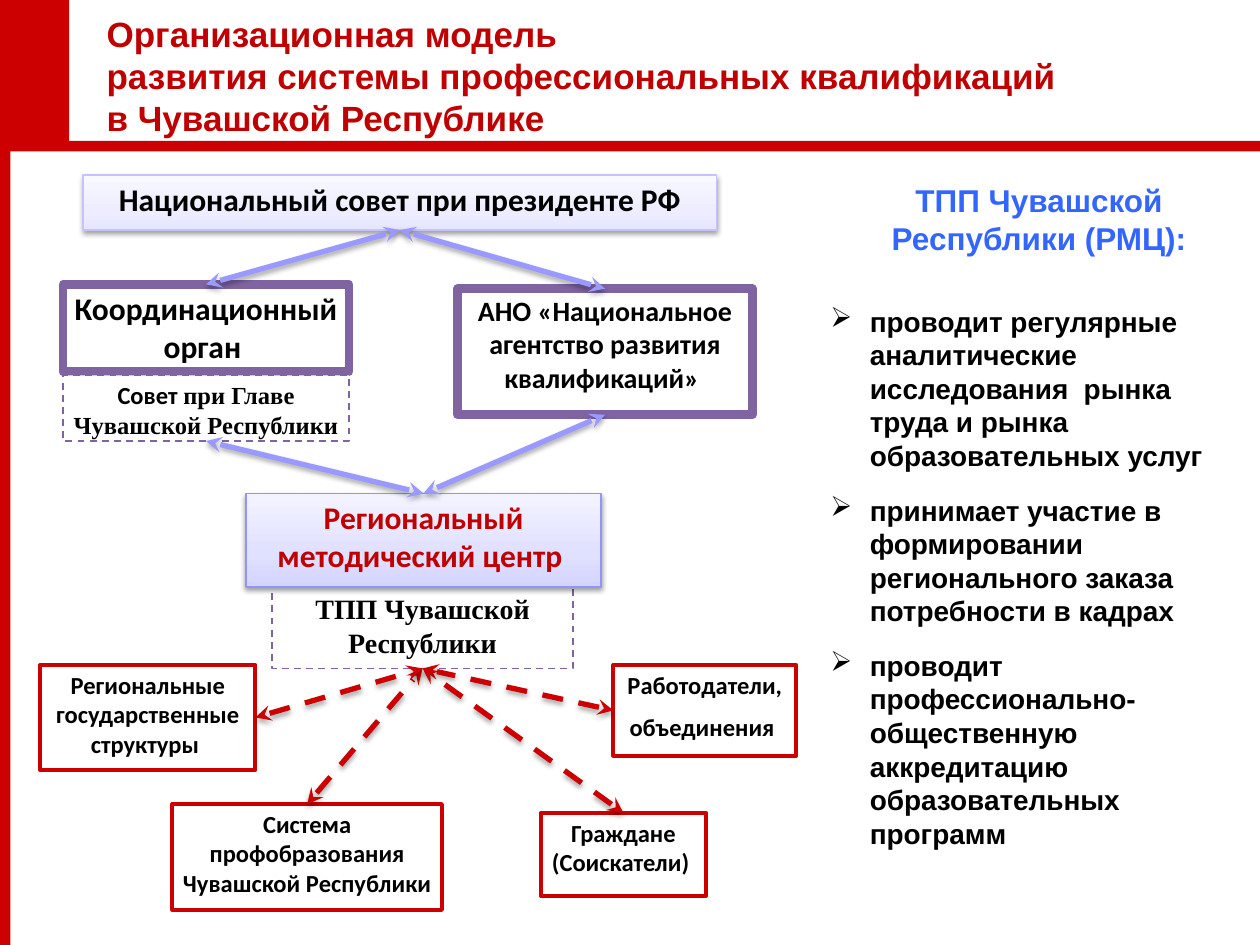
from copy import deepcopy

from lxml import etree
from pptx import Presentation
from pptx.dml.color import RGBColor
from pptx.enum.dml import MSO_LINE
from pptx.enum.shapes import MSO_CONNECTOR, MSO_SHAPE
from pptx.enum.text import MSO_ANCHOR, PP_ALIGN
from pptx.oxml.ns import qn
from pptx.util import Pt

RECTANGLE = MSO_SHAPE.RECTANGLE
STRAIGHT = MSO_CONNECTOR.STRAIGHT
DASH = MSO_LINE.DASH
CENTER = PP_ALIGN.CENTER
TOP, LEFT, BOTTOM, RIGHT = range(4)  # connection sites of a rectangle

rgb = RGBColor.from_string
RED, DARK_RED, PURPLE, LILAC = "CC0000", "C00000", "8064A2", "9999FF"
BLACK, WHITE, BLUE = "000000", "FFFFFF", "3366FF"


def add_shadow(effects, distance, opacity):
    """Put a soft shadow that falls straight down into an effect list."""
    shadow = etree.SubElement(
        effects, qn("a:outerShdw"), blurRad=str(Pt(3.1)), dist=str(Pt(distance)),
        dir="5400000", rotWithShape="0")
    color = etree.SubElement(shadow, qn("a:srgbClr"), val=BLACK)
    etree.SubElement(color, qn("a:alpha"), val=str(opacity * 1000))


def set_font(font, size, name, color):
    font.size, font.name, font.bold = Pt(size), name, True
    font.color.rgb = rgb(color)


deck = Presentation()
deck.slide_width, deck.slide_height = Pt(720), Pt(540)
page = deck.slides.add_slide(deck.slide_layouts[6])
shapes = page.shapes

# Red frame
for left, top, width, height in [(0, 0, 6, 540), (0, 80.5, 720, 6), (0, 0, 39.5, 82)]:
    bar = shapes.add_shape(RECTANGLE, Pt(left), Pt(top), Pt(width), Pt(height))
    bar.shadow.inherit = False
    bar.fill.solid()
    bar.fill.fore_color.rgb = rgb(RED)
    bar.line.fill.background()

# Title
title = shapes.add_textbox(Pt(55.5), Pt(9.5), Pt(578), Pt(67.5)).text_frame
title.word_wrap = True
title.vertical_anchor = MSO_ANCHOR.MIDDLE
title.margin_left = title.margin_right = Pt(5.4)
title.margin_top = title.margin_bottom = Pt(2.7)
title.text = ("Организационная модель\v"
              "развития системы профессиональных квалификаций\v"
              "в Чувашской Республике")
set_font(title.paragraphs[0].font, 20, "Arial", DARK_RED)

# Boxes: name, position, text, (size, font, colour), (outline, weight, dash), gradient
purple_frame = (PURPLE, 5, None)
dashed_frame = (PURPLE, 1, DASH)
red_frame = (RED, 2.25, None)
heading = (18, "Calibri", BLACK)
small = (14, "Calibri", BLACK)
boxes = [
    ("coordinator", (36, 162.5, 163.5, 50), "Координационный орган ",
     heading, purple_frame, None),
    ("chamber", (155.5, 335.5, 172, 46.5), "ТПП Чувашской Республики",
     (16, "Times New Roman", BLACK), dashed_frame, None),
    ("council", (36, 214.5, 163.5, 37.5), "Совет ",
     small, dashed_frame, None),
    ("agency", (261.5, 165, 168.5, 72),
     "АНО «Национальное агентство развития квалификаций» ",
     (16, "Calibri", BLACK), purple_frame, None),
    ("national", (47.5, 100, 362, 31.5), "Национальный совет при президенте РФ",
     heading, ("C4C4FB", 0.75, None), ("E6E6FF", "EDEDFF", "F8F8FF")),
    ("state", (23, 380, 123, 60), "Региональные государственные структуры ",
     small, red_frame, None),
    ("employers", (350.5, 380, 104.5, 52), "Работодатели,\nобъединения ",
     small, red_frame, None),
    ("education", (98.5, 459.5, 154, 60.5),
     "Система профобразования Чувашской Республики ", small, red_frame, None),
    ("citizens", (309, 464.5, 94.5, 47.5), "Граждане (Соискатели) ",
     small, red_frame, None),
    ("center", (140.5, 282, 203, 53.5), "Региональный методический центр ",
     (18, "Calibri", DARK_RED), ("9393FC", 0.75, None), ("D4D4FF", "E0E0FF", "F3F3FF")),
]
placed = {}
for name, position, text, font, (outline, weight, dash), gradient in boxes:
    box = shapes.add_shape(RECTANGLE, *map(Pt, position))
    placed[name] = box
    box.shadow.inherit = False
    if gradient:
        box.fill.gradient()
        box.fill.gradient_angle = 90
        stop_list = box.element.spPr.find(".//" + qn("a:gsLst"))
        stop_list.append(deepcopy(stop_list[0]))
        for stop, color, place in zip(box.fill.gradient_stops, gradient, (0, 0.35, 1)):
            stop.color.rgb = rgb(color)
            stop.position = place
        add_shadow(box.element.spPr.find(qn("a:effectLst")), 1.6, 38)
    else:
        box.fill.solid()
        box.fill.fore_color.rgb = rgb(WHITE)
    box.line.color.rgb = rgb(outline)
    box.line.width = Pt(weight)
    if dash:
        box.line.dash_style = dash
    frame = box.text_frame
    frame.word_wrap = True
    frame.vertical_anchor = MSO_ANCHOR.TOP
    frame.margin_left = frame.margin_right = Pt(5.4)
    frame.margin_top = frame.margin_bottom = Pt(2.7)
    frame.text = text
    for para in frame.paragraphs:
        para.alignment = CENTER
        para.space_after = Pt(7.5)
        set_font(para.font, *font)

# The council's second run has its own typeface
span = placed["council"].text_frame.paragraphs[0].add_run()
span.text = "при Главе Чувашской Республики "
span.font.name = "Times New Roman"

# Two-headed arrows between the boxes
arrows = [
    ("national", BOTTOM, "coordinator", TOP, LILAC),
    ("agency", TOP, "national", BOTTOM, LILAC),
    ("center", TOP, "council", BOTTOM, LILAC),
    ("center", TOP, "agency", BOTTOM, LILAC),
    ("employers", LEFT, "chamber", BOTTOM, RED),
    ("education", TOP, "chamber", BOTTOM, RED),
    ("citizens", TOP, "chamber", BOTTOM, RED),
    ("state", RIGHT, "chamber", BOTTOM, RED),
]
for start, start_site, end, end_site, color in arrows:
    arrow = shapes.add_connector(STRAIGHT, 0, 0, 0, 0)
    arrow.begin_connect(placed[start], start_site)
    arrow.end_connect(placed[end], end_site)
    arrow.line.color.rgb = rgb(color)
    arrow.line.width = Pt(3)
    if color == RED:
        arrow.line.dash_style = DASH
    properties = arrow._element.spPr
    for tip in ("a:headEnd", "a:tailEnd"):
        etree.SubElement(properties.find(qn("a:ln")), qn(tip), type="stealth")
    add_shadow(etree.SubElement(properties, qn("a:effectLst")), 1.8, 35)

# Duties of the regional centre
panel = shapes.add_textbox(Pt(467.5), Pt(100), Pt(252.5), Pt(394)).text_frame
panel.word_wrap = True
panel.text = "ТПП Чувашской Республики (РМЦ):"
panel.paragraphs[0].alignment = CENTER
set_font(panel.paragraphs[0].font, 18, "Arial", BLUE)
duties = [
    "проводит регулярные аналитические исследования  рынка труда и рынка "
    "образовательных услуг",
    "принимает участие в формировании регионального заказа  потребности в кадрах",
    "проводит профессионально-общественную аккредитацию образовательных программ",
]
for number, duty in enumerate(duties):
    para = panel.add_paragraph()
    para.text = duty
    para.space_before = Pt(6 if number else 27)
    para.space_after = Pt(6)
    indents = para._p.get_or_add_pPr()
    indents.set("marL", str(Pt(22.5)))
    indents.set("indent", str(-Pt(22.5)))
    etree.SubElement(indents, qn("a:buChar"), char="➢")
    set_font(para.font, 16, "Arial", BLACK)

deck.save("out.pptx")
